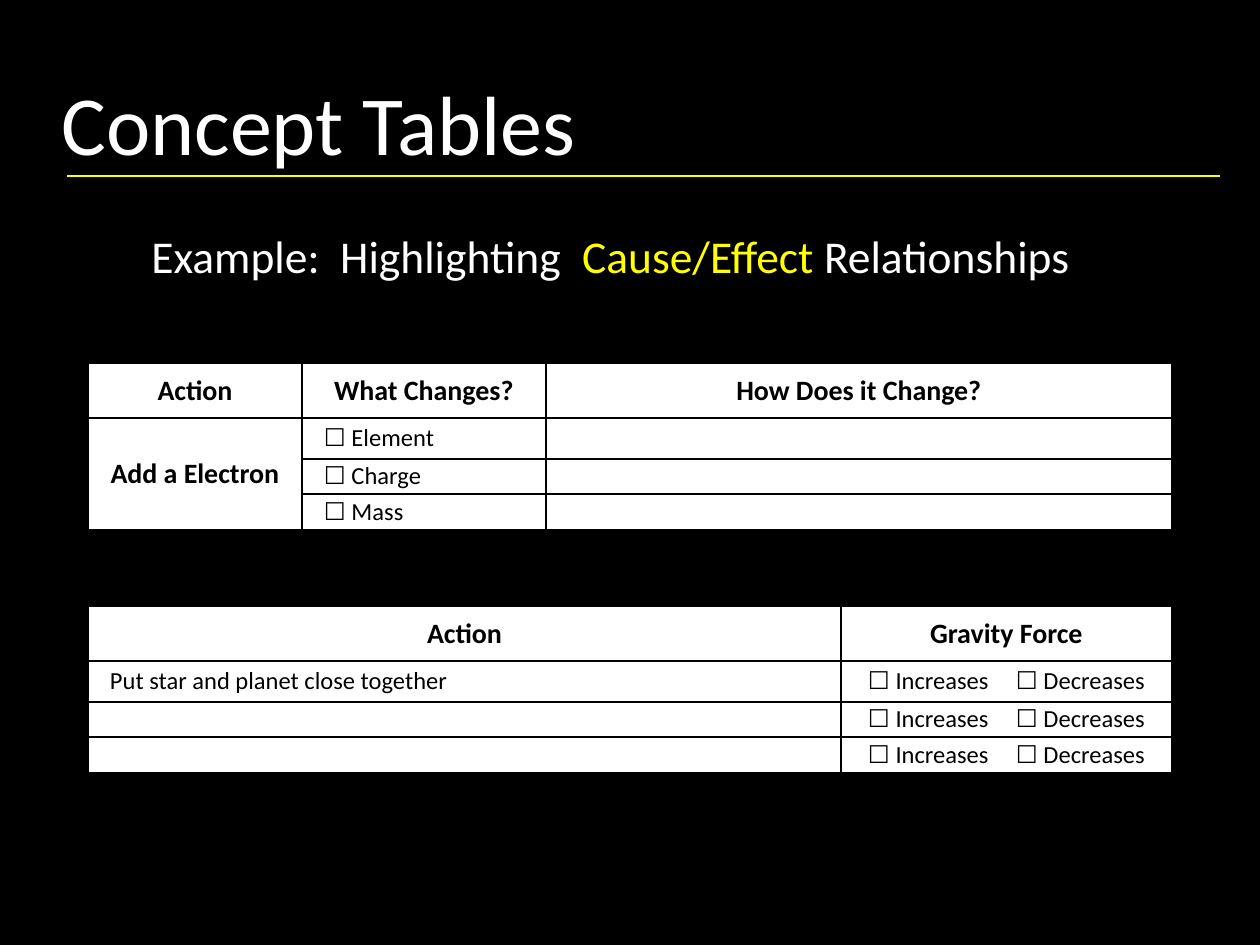
"""Build a slide with two concept tables on cause and effect."""
from lxml.etree import SubElement
from pptx import Presentation
from pptx.dml.color import RGBColor
from pptx.enum.shapes import MSO_CONNECTOR
from pptx.enum.text import MSO_ANCHOR, MSO_AUTO_SIZE, PP_ALIGN
from pptx.oxml.ns import qn
from pptx.util import Pt

LINE = MSO_CONNECTOR.STRAIGHT
LOW, MID = MSO_ANCHOR.BOTTOM, MSO_ANCHOR.MIDDLE
NONE, GROW = MSO_AUTO_SIZE.NONE, MSO_AUTO_SIZE.SHAPE_TO_FIT_TEXT
LEFT, CENTER = PP_ALIGN.LEFT, PP_ALIGN.CENTER
BLACK, WHITE, YELLOW = "000000", "FFFFFF", "FFFF00"
ROWS = [55, 41, 35, 36]


def px(num):
    return round(num * 914400 / 126)


def rgb(code):
    return RGBColor.from_string(code)


class Deck:
    def __init__(self, font):
        self.font = font
        self.prs = Presentation()
        self.prs.slide_width, self.prs.slide_height = px(1260), px(945)
        self.slide = self.prs.slides.add_slide(self.prs.slide_layouts[5])
        fill = self.slide.background.fill
        fill.solid()
        fill.fore_color.rgb = rgb(BLACK)

    def style(self, run, size, color, bold=False):
        run.font.name, run.font.size = self.font, Pt(size)
        run.font.bold, run.font.color.rgb = bold, rgb(color)

    def title(self, text, x, y, w, h):
        box = self.slide.shapes.title
        box.left, box.top, box.width, box.height = map(px, (x, y, w, h))
        frame = box.text_frame
        frame.text = text
        frame.vertical_anchor, frame.auto_size = LOW, NONE
        para = frame.paragraphs[0]
        para.alignment, para.space_before = LEFT, Pt(4)
        self.style(para.runs[0], 48, WHITE)

    def rule(self, x, y, w):
        line = self.slide.shapes.add_connector(LINE, px(x), px(y), px(x + w), px(y))
        line.line.color.rgb, line.line.width = rgb(YELLOW), Pt(0.75)
        SubElement(line._element.spPr, qn("a:effectLst"))

    def text(self, parts, x, y, w, h):
        box = self.slide.shapes.add_textbox(*map(px, (x, y, w, h)))
        frame = box.text_frame
        frame.word_wrap, frame.auto_size = True, GROW
        for text, color in parts:
            run = frame.paragraphs[0].add_run()
            run.text = text
            self.style(run, 26, color)

    def cell(self, cell, text, bold, pad, tab):
        cell.text = text
        cell.vertical_anchor = MID
        cell.margin_top = cell.margin_bottom = 0
        cell.margin_left, cell.margin_right = px(11 if bold else pad), px(11)
        para = cell.text_frame.paragraphs[0]
        para.alignment = CENTER if bold else LEFT
        for run in para.runs:
            self.style(run, 16 if bold else 14, BLACK, bold)
        if not text:
            SubElement(para._p, qn("a:endParaRPr"), sz="1400")
        if "\t" in text:
            tabs = SubElement(para._p.get_or_add_pPr(), qn("a:tabLst"))
            SubElement(tabs, qn("a:tab"), pos=str(px(tab)), algn="l")
        props = cell._tc.get_or_add_tcPr()
        for side in "LRTB":
            edge = SubElement(props, qn(f"a:ln{side}"), w=str(Pt(1)))
            SubElement(SubElement(edge, qn("a:solidFill")), qn("a:srgbClr"), val=BLACK)
        cell.fill.solid()
        cell.fill.fore_color.rgb = rgb(WHITE)

    def table(self, data, x, y, cols, pads, bold, tab=0):
        size = map(px, (x, y, sum(cols), sum(ROWS)))
        grid = self.slide.shapes.add_table(len(ROWS), len(cols), *size).table
        for col, wide in zip(grid.columns, cols):
            col.width = px(wide)
        for row, high in zip(grid.rows, ROWS):
            row.height = px(high)
        for r, line in enumerate(data):
            for c, text in enumerate(line):
                self.cell(grid.cell(r, c), text, r == 0 or c in bold, pads[c], tab)
        return grid


def main():
    deck = Deck("Calibri")
    deck.title("Concept Tables", 49, 32, 1058, 147)
    deck.rule(67, 176, 1153)
    grid = deck.table([
        ["Action", "What Changes?", "How Does it Change?"],
        ["Add a Electron", "☐ Element", ""],
        ["", "☐ Charge", ""],
        ["", "☐ Mass", ""],
    ], 88, 363, [214, 244, 626], [11, 22, 11], [0])
    grid.cell(1, 0).merge(grid.cell(3, 0))
    pair = "☐ Increases\t☐ Decreases"
    deck.table([
        ["Action", "Gravity Force"],
        ["Put star and planet close together", pair],
        ["", pair],
        ["", pair],
    ], 88, 606, [753, 331], [22, 27], [], 148)
    deck.text([
        ("Example:  Highlighting ", WHITE),
        (" Cause/Effect ", YELLOW),
        ("Relationships", WHITE),
    ], 139, 222, 982, 68)
    deck.prs.save("out.pptx")


if __name__ == "__main__":
    main()
